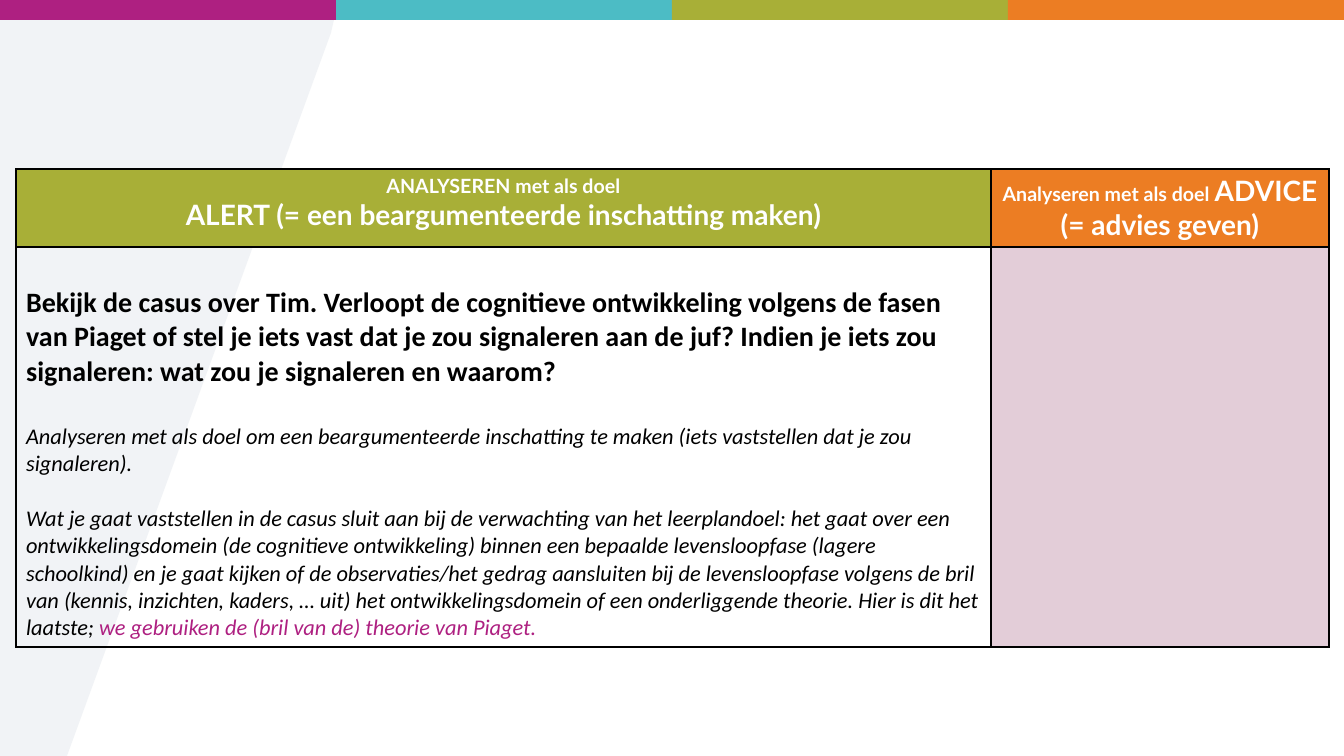
from lxml import etree
from pptx import Presentation, util as u
from pptx.dml.color import RGBColor
from pptx.enum import shapes, text
from pptx.oxml.ns import qn

PX = 914400 / 100.8
COLORS = {
    "mist": "E8ECF0", "magenta": "AE2081", "teal": "4CBCC5", "olive": "A8AF37",
    "orange": "EC7D23", "pink": "E3CDD8", "black": "000000", "white": "FFFFFF",
}


def px(n):
    return u.Emu(round(n * PX))


def color(name):
    return RGBColor.from_string(COLORS[name])


class SlideBuilder:
    def __init__(self, slide):
        self.s = slide

    def paint(self, sp, fill, alpha=None):
        sp.shadow.inherit = False
        sp.fill.solid()
        sp.fill.fore_color.rgb = color(fill)
        sp.line.fill.background()
        if alpha:
            clr = sp.fill._xPr.find(".//" + qn("a:srgbClr"))
            etree.SubElement(clr, qn("a:alpha"), val=str(alpha * 1000))

    def rect(self, x, y, w, h, fill):
        sp = self.s.shapes.add_shape(shapes.MSO_SHAPE.RECTANGLE, px(x), px(y), px(w), px(h))
        self.paint(sp, fill)

    def outline(self, points, fill, alpha):
        fb = self.s.shapes.build_freeform(*points[0], scale=PX)
        fb.add_line_segments(points[1:], close=True)
        self.paint(fb.convert_to_shape(), fill, alpha)

    def table(self, x, y, cols, rows):
        frame = self.s.shapes.add_table(len(rows), len(cols), px(x), px(y),
                                        px(sum(cols)), px(sum(rows)))
        tbl = frame.table
        tbl.first_row = tbl.horz_banding = False
        for col, w in zip(tbl.columns, cols):
            col.width = px(w)
        for row, h in zip(tbl.rows, rows):
            row.height = px(h)
        for cell in tbl.iter_cells():
            self.border(cell)
        return tbl

    def border(self, cell):
        tc_pr = cell._tc.get_or_add_tcPr()
        for i, side in enumerate(("lnL", "lnR", "lnT", "lnB")):
            ln = etree.Element(qn("a:" + side), w=str(u.Pt(1)))
            fill = etree.SubElement(ln, qn("a:solidFill"))
            etree.SubElement(fill, qn("a:srgbClr"), val=COLORS["black"])
            tc_pr.insert(i, ln)

    def cell(self, cell, fill=None, paragraphs=(), font="Lato", align=text.PP_ALIGN.LEFT):
        """Each paragraph is (space before in pt, runs); a run is (text, size, colour, bold)."""
        if fill:
            cell.fill.solid()
            cell.fill.fore_color.rgb = color(fill)
        else:
            cell.fill.background()
        tf = cell.text_frame
        for i, (before, runs) in enumerate(paragraphs):
            p = tf.add_paragraph() if i else tf.paragraphs[0]
            p.alignment = align
            if before:
                p.space_before = u.Pt(before)
            for words, size, ink, bold in runs:
                if words == "\n":
                    p.add_line_break()
                    continue
                r = p.add_run()
                r.text = words
                r.font.name = font
                r.font.size = u.Pt(size)
                r.font.bold = bold
                r.font.italic = not bold
                r.font.color.rgb = color(ink)


def main():
    prs = Presentation()
    prs.slide_width, prs.slide_height = px(1344), px(756)
    s = SlideBuilder(prs.slides.add_slide(prs.slide_layouts[6]))

    # Slanted background panel and colour bar
    s.outline([(331, 33), (334, 20), (328, 9), (311, 5), (0, 5), (0, 756), (67, 756)], "mist", 59)
    for i, fill in enumerate(("magenta", "teal", "olive", "orange")):
        s.rect(i * 336, 0, 336, 20, fill)

    # Table header
    tbl = s.table(16, 169, cols=(975, 338), rows=(78, 400))
    center = text.PP_ALIGN.CENTER
    s.cell(tbl.cell(0, 0), "olive", [(0, [
        ("ANALYSEREN met als doel", 14, "white", True),
        ("\n", 14, "white", True),
        ("ALERT (= een beargumenteerde inschatting maken)", 20, "white", True),
    ])], align=center)
    s.cell(tbl.cell(0, 1), "orange", [(0, [
        ("Analyseren met als doel ", 14, "white", True),
        ("ADVICE (= advies geven)", 20, "white", True),
    ])], align=center)

    # Assignment and explanation
    task = tbl.cell(1, 0)
    task.margin_top = px(39)
    s.cell(task, None, [
        (0, [("Bekijk de casus over Tim. Verloopt de cognitieve ontwikkeling volgens de fasen "
              "van Piaget of stel je iets vast dat je zou signaleren aan de juf? Indien je iets "
              "zou signaleren: wat zou je signaleren en waarom?", 20, "black", True)]),
        (24.4, [("Analyseren met als doel om een beargumenteerde inschatting te maken "
                 "(iets vaststellen dat je zou signaleren).", 16, "black", False)]),
        (19.5, [("Wat je gaat vaststellen in de casus sluit aan bij de verwachting van het "
                 "leerplandoel: het gaat over een ontwikkelingsdomein (de cognitieve "
                 "ontwikkeling) binnen een bepaalde levensloopfase (lagere schoolkind) en je "
                 "gaat kijken of de observaties/het gedrag aansluiten bij de levensloopfase "
                 "volgens de bril van (kennis, inzichten, kaders, … uit) het "
                 "ontwikkelingsdomein of een onderliggende theorie. Hier is dit het laatste; ",
                 16, "black", False),
                ("we gebruiken de (bril van de) theorie van Piaget.", 16, "magenta", False)]),
    ], font="Calibri")
    s.cell(tbl.cell(1, 1), "pink")

    prs.save("out.pptx")


if __name__ == "__main__":
    main()
